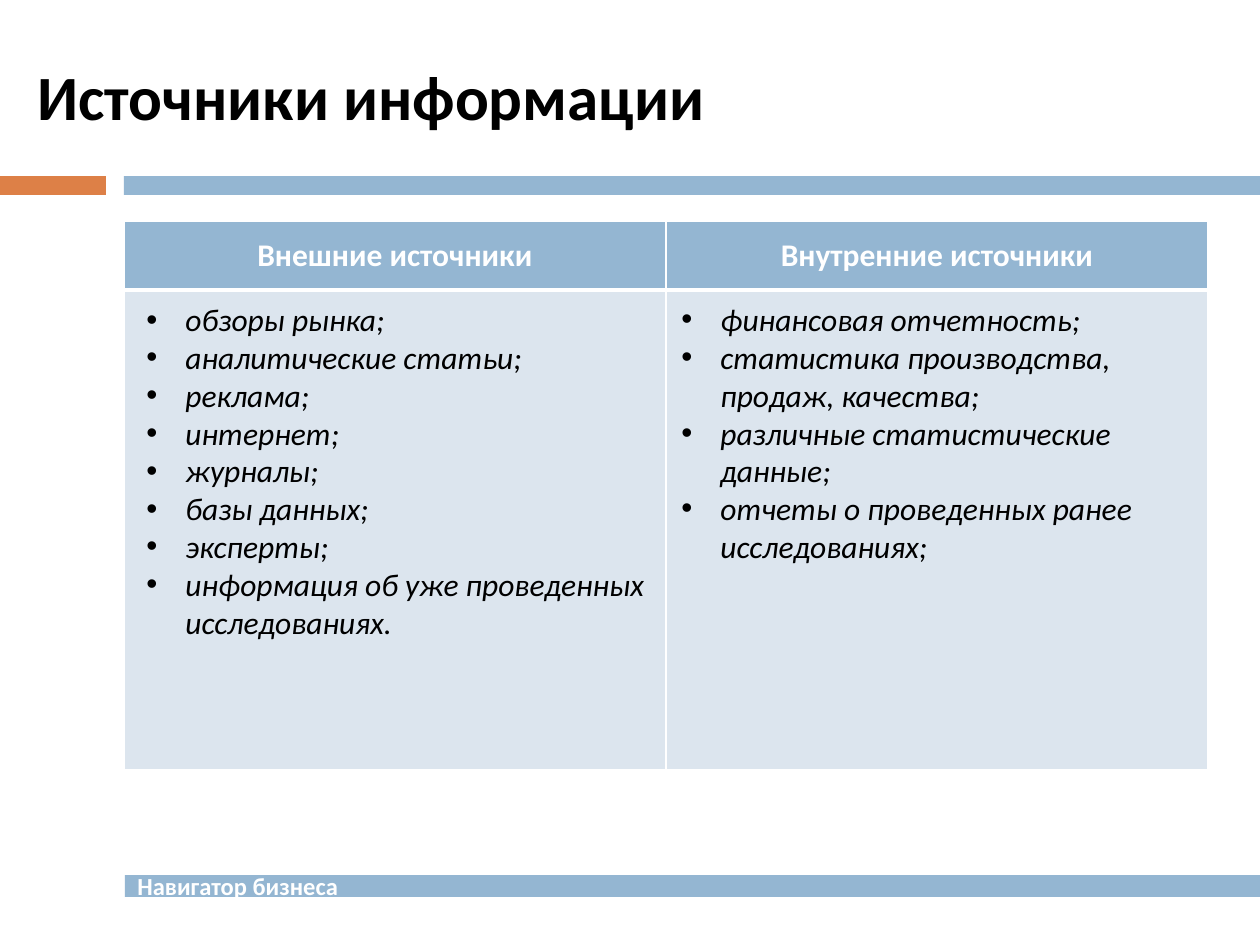
from lxml import etree
from pptx import Presentation
from pptx.dml.color import RGBColor
from pptx.enum.shapes import MSO_SHAPE
from pptx.enum.text import MSO_ANCHOR, MSO_AUTO_SIZE, PP_ALIGN
from pptx.oxml.ns import qn
from pptx.util import Pt

RECTANGLE = MSO_SHAPE.RECTANGLE
MIDDLE = MSO_ANCHOR.MIDDLE
GROW = MSO_AUTO_SIZE.SHAPE_TO_FIT_TEXT
LEFT, CENTER = PP_ALIGN.LEFT, PP_ALIGN.CENTER

PX = 914400 / 126
COLORS = {
    "accent": "DD8047",
    "band": "94B6D2",
    "cell": "DCE5EE",
    "light": "FFFFFF",
    "text": "000000",
}
INDENT = 39
TITLE_ONLY = 5

SOURCES = [
    ("Внешние источники", (134, 294, 525, 357), [
        "обзоры рынка;",
        "аналитические статьи;",
        "реклама;",
        "интернет;",
        "журналы;",
        "базы данных;",
        "эксперты;",
        "информация об уже проведенных исследованиях.",
    ]),
    ("Внутренние источники", (669, 294, 536, 280), [
        "финансовая отчетность;",
        "статистика производства, продаж, качества;",
        "различные статистические данные;",
        "отчеты о проведенных ранее исследованиях;",
    ]),
]


def emu(*lengths):
    return [round(length * PX) for length in lengths]


def add_run(paragraph, text, size, color, bold=False, italic=False):
    run = paragraph.add_run()
    run.text = text
    run.font.name = "Calibri"
    run.font.size = Pt(size)
    run.font.bold = bold
    run.font.italic = italic
    run.font.color.rgb = RGBColor.from_string(COLORS[color])


prs = Presentation()
prs.slide_width, prs.slide_height = emu(1260, 945)
slide = prs.slides.add_slide(prs.slide_layouts[TITLE_ONLY])

# Title
title = slide.shapes.title
title.left, title.top, title.width, title.height = emu(25, 27, 1124, 136)
title.text_frame.vertical_anchor = MIDDLE
heading = title.text_frame.paragraphs[0]
heading.alignment = LEFT
add_run(heading, "Источники информации", 36, "text", bold=True)

# Bars under the title and at the foot
for box, color in [
    ((0, 176, 106, 19), "accent"),
    ((124, 176, 1136, 19), "band"),
    ((125, 875, 1135, 22), "band"),
]:
    bar = slide.shapes.add_shape(RECTANGLE, *emu(*box))
    bar.shadow.inherit = False
    bar.fill.solid()
    bar.fill.fore_color.rgb = RGBColor.from_string(COLORS[color])
    bar.line.fill.background()

footer = bar.text_frame
footer.vertical_anchor = MIDDLE
footer.paragraphs[0].alignment = LEFT
add_run(footer.paragraphs[0], "Навигатор бизнеса", 14, "light", bold=True)

# Table: header row above one tall row that holds the lists
table = slide.shapes.add_table(2, 2, *emu(124, 221, 1084, 549)).table
for row, height in zip(table.rows, emu(69, 480)):
    row.height = height

for row_index, fill in enumerate(["band", "cell"]):
    top, bottom = [(1, 3), (3, 1)][row_index]
    for column_index, (header, _, _) in enumerate(SOURCES):
        cell = table.cell(row_index, column_index)
        properties = cell._tc.get_or_add_tcPr()
        for side, width in [("L", 1), ("R", 1), ("T", top), ("B", bottom)]:
            border = etree.SubElement(properties, qn(f"a:ln{side}"), w=str(Pt(width)))
            line_fill = etree.SubElement(border, qn("a:solidFill"))
            etree.SubElement(line_fill, qn("a:srgbClr"), val=COLORS["light"])
        cell.fill.solid()
        cell.fill.fore_color.rgb = RGBColor.from_string(COLORS[fill])
        if row_index == 0:
            cell.vertical_anchor = MIDDLE
            paragraph = cell.text_frame.paragraphs[0]
            paragraph.alignment = CENTER
            add_run(paragraph, header, 18, "light", bold=True)

# Bulleted lists over the tall row
indent = emu(INDENT)[0]
for _, box, items in SOURCES:
    frame = slide.shapes.add_textbox(*emu(*box)).text_frame
    frame.word_wrap = True
    frame.auto_size = GROW
    for index, item in enumerate(items):
        paragraph = frame.add_paragraph() if index else frame.paragraphs[0]
        properties = paragraph._p.get_or_add_pPr()
        properties.set("marL", str(indent))
        properties.set("indent", str(-indent))
        etree.SubElement(properties, qn("a:buFont"), typeface="Arial")
        etree.SubElement(properties, qn("a:buChar"), char="•")
        add_run(paragraph, item, 18, "text", italic=True)

prs.save("out.pptx")
